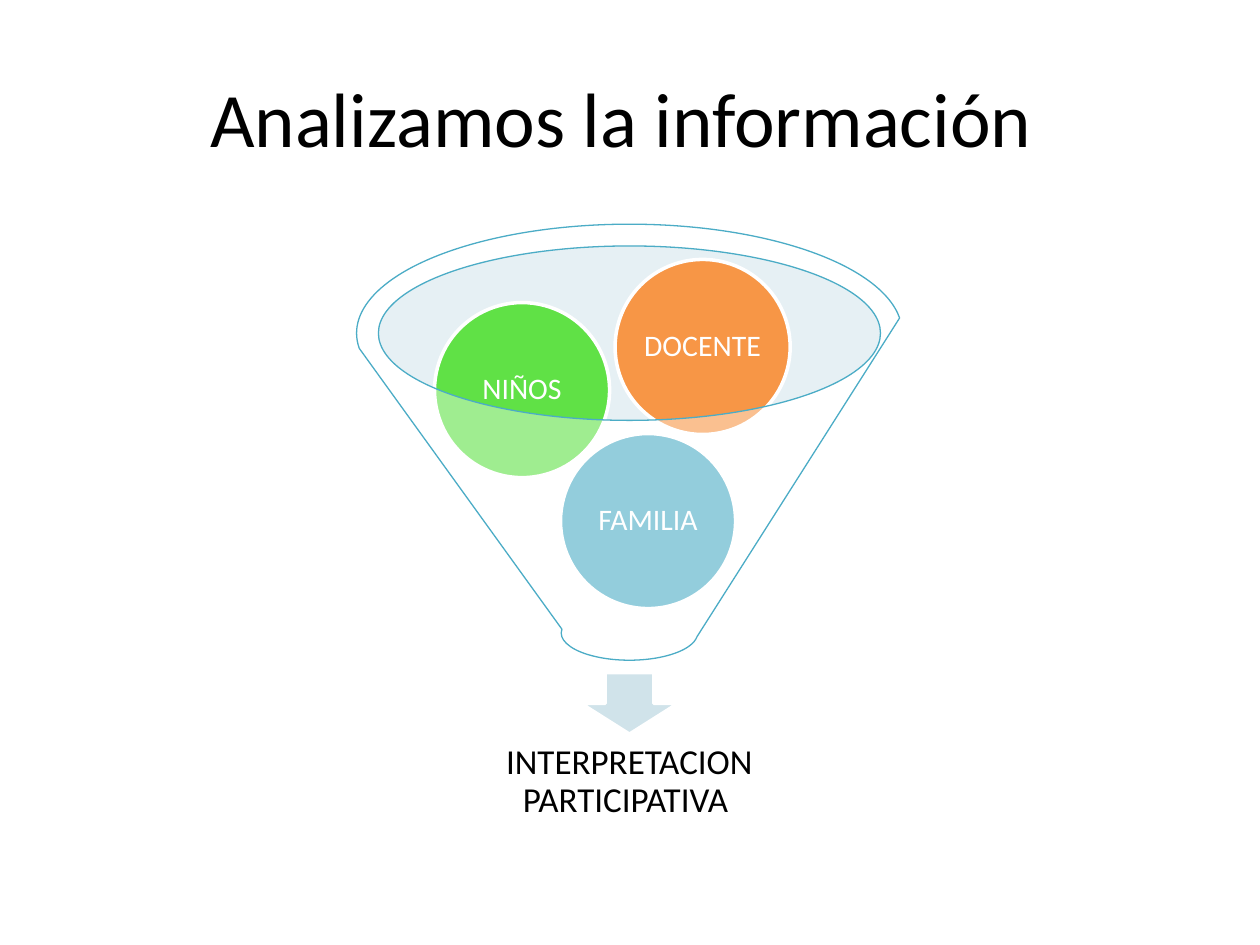
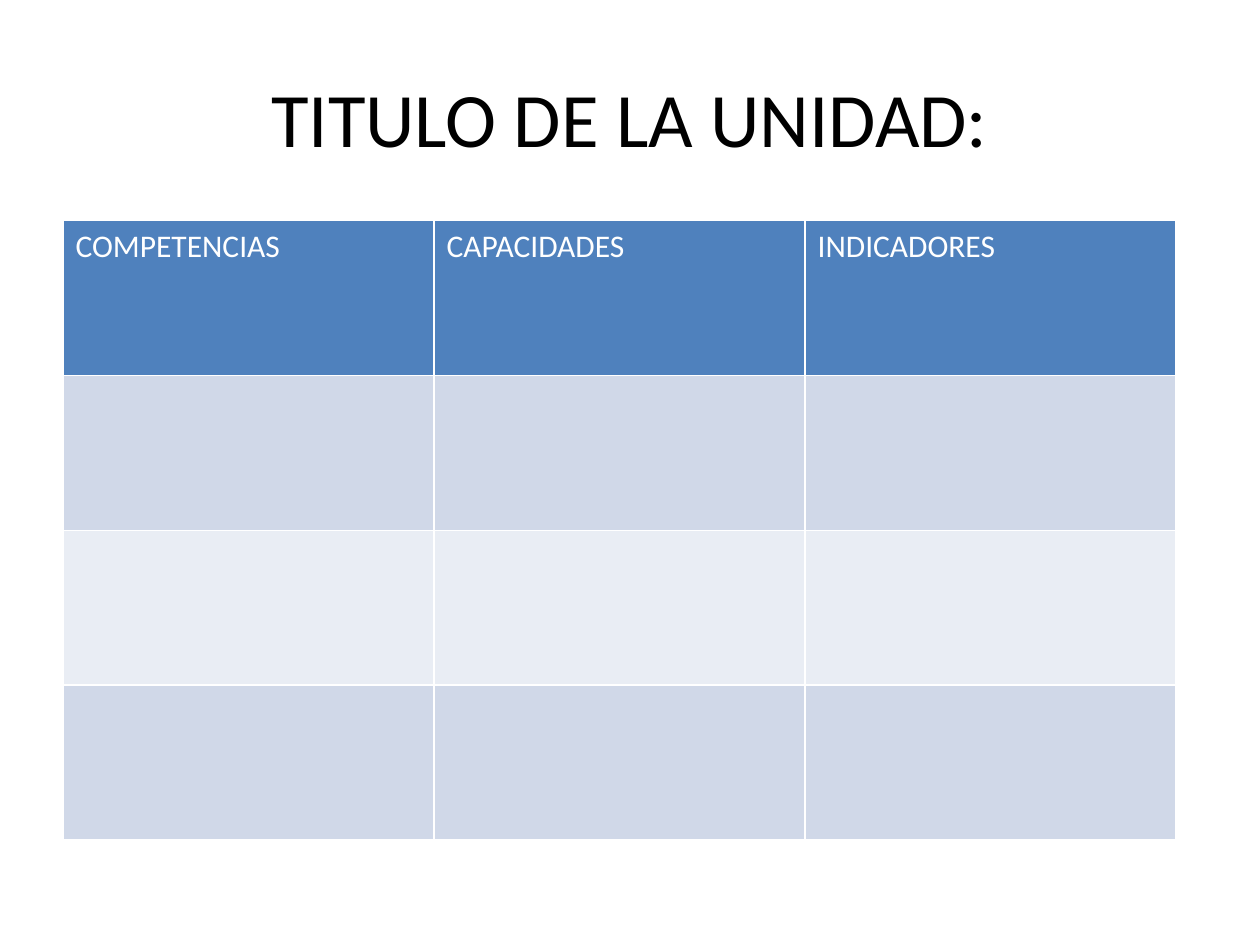
from lxml import etree
from pptx import Presentation
from pptx.dml.color import RGBColor
from pptx.enum.shapes import MSO_SHAPE
from pptx.enum.text import MSO_ANCHOR, PP_ALIGN
from pptx.oxml.ns import qn
from pptx.util import Cm, Pt

OVAL = MSO_SHAPE.OVAL
ARROW = MSO_SHAPE.DOWN_ARROW
FUNNEL = MSO_SHAPE.FUNNEL
MIDDLE = MSO_ANCHOR.MIDDLE
CENTER = PP_ALIGN.CENTER
LEFT = PP_ALIGN.LEFT

WHITE, BLACK, TEAL = "FFFFFF", "000000", "4BACC6"


def paint(fill, color, alpha=None):
    fill.solid()
    fill.fore_color.rgb = RGBColor.from_string(color)
    if alpha:
        tint = fill._xPr.find(qn("a:solidFill"))[0]
        etree.SubElement(tint, qn("a:alpha"), val=str(alpha * 1000))


def write(frame, text, size=18, color=BLACK, align=CENTER, space=None, inset=None):
    frame.word_wrap = True
    if inset is not None:
        frame.margin_left = frame.margin_right = Cm(inset)
        frame.margin_top = frame.margin_bottom = Cm(inset)
    line = frame.paragraphs[0]
    line.text = text
    line.alignment = align
    line.line_spacing = space
    line.font.name = "Calibri"
    line.font.size = Pt(size)
    line.font.bold = False
    line.font.color.rgb = RGBColor.from_string(color)


deck = Presentation()
deck.slide_width, deck.slide_height = Cm(25.4), Cm(19.05)

slides = []
for text in ("Analizamos la información ", "TITULO DE LA UNIDAD:"):
    slide = deck.slides.add_slide(deck.slide_layouts[5])
    title = slide.shapes.title
    title.left, title.top = Cm(1.27), Cm(0.76)
    title.width, title.height = Cm(22.86), Cm(3.18)
    write(title.text_frame, text, size=44)
    title.text_frame.vertical_anchor = MIDDLE
    slides.append(slide)
first, second = slides

parts = [
    (OVAL, 7.62, 4.95, 10.13, 3.53, "C1DBE5", 40, None, 0, ""),
    (ARROW, 11.71, 13.56, 1.96, 1.24, "D0E3EA", None, WHITE, 2, ""),
    (OVAL, 11.3, 8.74, 3.53, 3.53, TEAL, None, WHITE, 2, "FAMILIA"),
    (OVAL, 8.76, 6.1, 3.53, 3.53, "60E146", None, WHITE, 2, "NIÑOS"),
    (OVAL, 12.4, 5.23, 3.53, 3.53, "F79646", None, WHITE, 2, "DOCENTE"),
    (FUNNEL, 7.19, 4.52, 11, 8.79, WHITE, 40, TEAL, 0.75, ""),
]
for kind, left, top, width, height, color, alpha, edge, weight, label in parts:
    shape = first.shapes.add_shape(kind, Cm(left), Cm(top), Cm(width), Cm(height))
    shape.shadow.inherit = False
    paint(shape.fill, color, alpha)
    if edge:
        paint(shape.line.fill, edge)
        shape.line.width = Pt(weight)
    else:
        shape.line.fill.background()
    if label:
        write(shape.text_frame, label, size=17, color=WHITE, space=0.9, inset=0.05)
        shape.text_frame.vertical_anchor = MIDDLE

result = first.shapes.add_textbox(Cm(7.98), Cm(14.58), Cm(9.42), Cm(2.36)).text_frame
write(result, "INTERPRETACION PARTICIPATIVA ", size=20, space=0.9, inset=0.4)
result.vertical_anchor = MIDDLE

heads = ["COMPETENCIAS", "CAPACIDADES", "INDICADORES"]
bands = ["4F81BD", "D0D8E8", "E9EDF4", "D0D8E8"]
table = second.shapes.add_table(
    len(bands), len(heads), Cm(1.27), Cm(4.45), Cm(22.44), Cm(12.48)
).table
for row, band in zip(table.rows, bands):
    for cell in row.cells:
        props = cell._tc.get_or_add_tcPr()
        for side in ("lnL", "lnR", "lnT", "lnB"):
            rule = etree.SubElement(props, qn("a:" + side), w=str(Pt(1)))
            ink = etree.SubElement(rule, qn("a:solidFill"))
            etree.SubElement(ink, qn("a:srgbClr"), val=WHITE)
        paint(cell.fill, band)
for cell, head in zip(table.rows[0].cells, heads):
    write(cell.text_frame, head, color=WHITE, align=LEFT)

deck.save("out.pptx")
